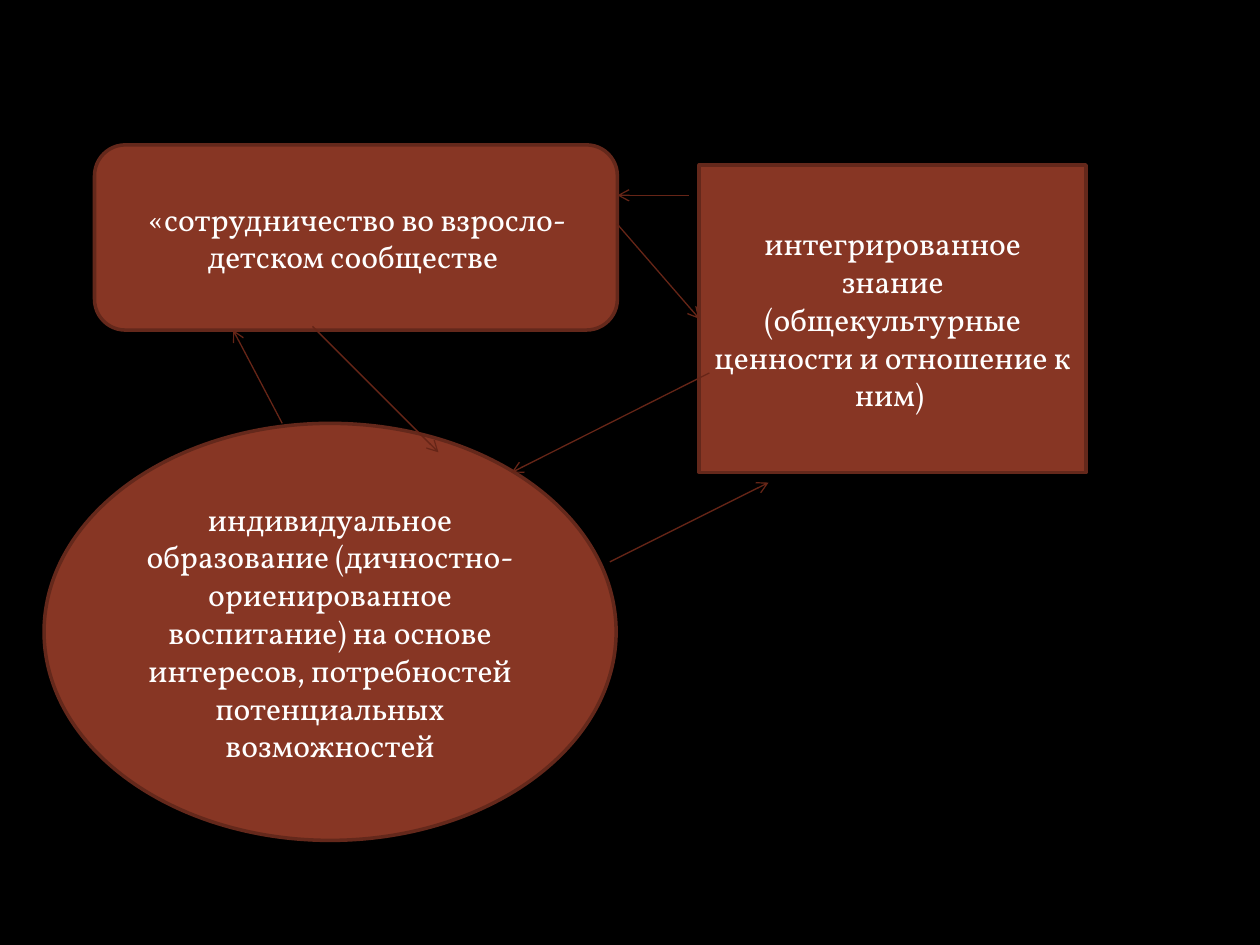
from lxml.etree import SubElement
from pptx import Presentation
from pptx.dml.color import RGBColor
from pptx.enum.shapes import MSO_CONNECTOR, MSO_SHAPE
from pptx.enum.text import MSO_ANCHOR, PP_ALIGN
from pptx.oxml.ns import qn
from pptx.util import Inches, Pt

BLACK = RGBColor(0x00, 0x00, 0x00)
WHITE = RGBColor(0xFF, 0xFF, 0xFF)
BRICK = RGBColor(0x87, 0x36, 0x24)
EDGE = RGBColor(0x64, 0x28, 0x1B)
ARROW = RGBColor(0x66, 0x25, 0x17)
FONT = "Vollkorn"

# Kind, box (left, top, width, height), text
NODES = [
    (MSO_SHAPE.ROUNDED_RECTANGLE, (0.75, 1.15, 4.15, 1.47),
     "«сотрудничество во взросло-детском сообществе "),
    (MSO_SHAPE.RECTANGLE, (5.55, 1.31, 3.07, 2.44),
     "интегрированное знание (общекультурные ценности и отношение к ним) "),
    (MSO_SHAPE.OVAL, (0.35, 3.36, 4.54, 3.31),
     "индивидуальное образование (дичностно-ориенированное воспитание) "
     "на основе интересов, потребностей потенциальных возможностей"),
]

# Start and end points
LINKS = [
    ((2.48, 2.59), (3.48, 3.59)),
    ((4.9, 1.78), (5.55, 2.53)),
    ((5.63, 2.96), (4.06, 3.75)),
    ((2.24, 3.36), (1.85, 2.62)),
    ((4.84, 4.46), (6.1, 3.83)),
    ((5.47, 1.55), (4.9, 1.55)),
]


def add_node(slide, kind, box, text):
    node = slide.shapes.add_shape(kind, *map(Inches, box))
    node.shadow.inherit = False
    node.fill.solid()
    node.fill.fore_color.rgb = BRICK
    node.line.color.rgb = EDGE
    node.line.width = Pt(2)

    # Centred label
    frame = node.text_frame
    frame.word_wrap = True
    frame.vertical_anchor = MSO_ANCHOR.MIDDLE
    frame.text = text
    para = frame.paragraphs[0]
    para.alignment = PP_ALIGN.CENTER
    font = para.runs[0].font
    font.name = FONT
    font.size = Pt(18)
    font.color.rgb = WHITE


def add_arrow(slide, start, end):
    link = slide.shapes.add_connector(
        MSO_CONNECTOR.STRAIGHT, *map(Inches, start + end))
    link.line.color.rgb = ARROW
    link.line.width = Pt(0.75)

    # Open arrowhead at the end, no shadow
    props = link.element.spPr
    SubElement(props.find(qn("a:ln")), qn("a:tailEnd"), type="arrow")
    SubElement(props, qn("a:effectLst"))


def main():
    deck = Presentation()
    deck.slide_width = Inches(10)
    deck.slide_height = Inches(7.5)
    slide = deck.slides.add_slide(deck.slide_layouts[6])
    slide.background.fill.solid()
    slide.background.fill.fore_color.rgb = BLACK

    # Three ideas, then the arrows between them
    for kind, box, text in NODES:
        add_node(slide, kind, box, text)
    for start, end in LINKS:
        add_arrow(slide, start, end)

    deck.save("out.pptx")


if __name__ == "__main__":
    main()
